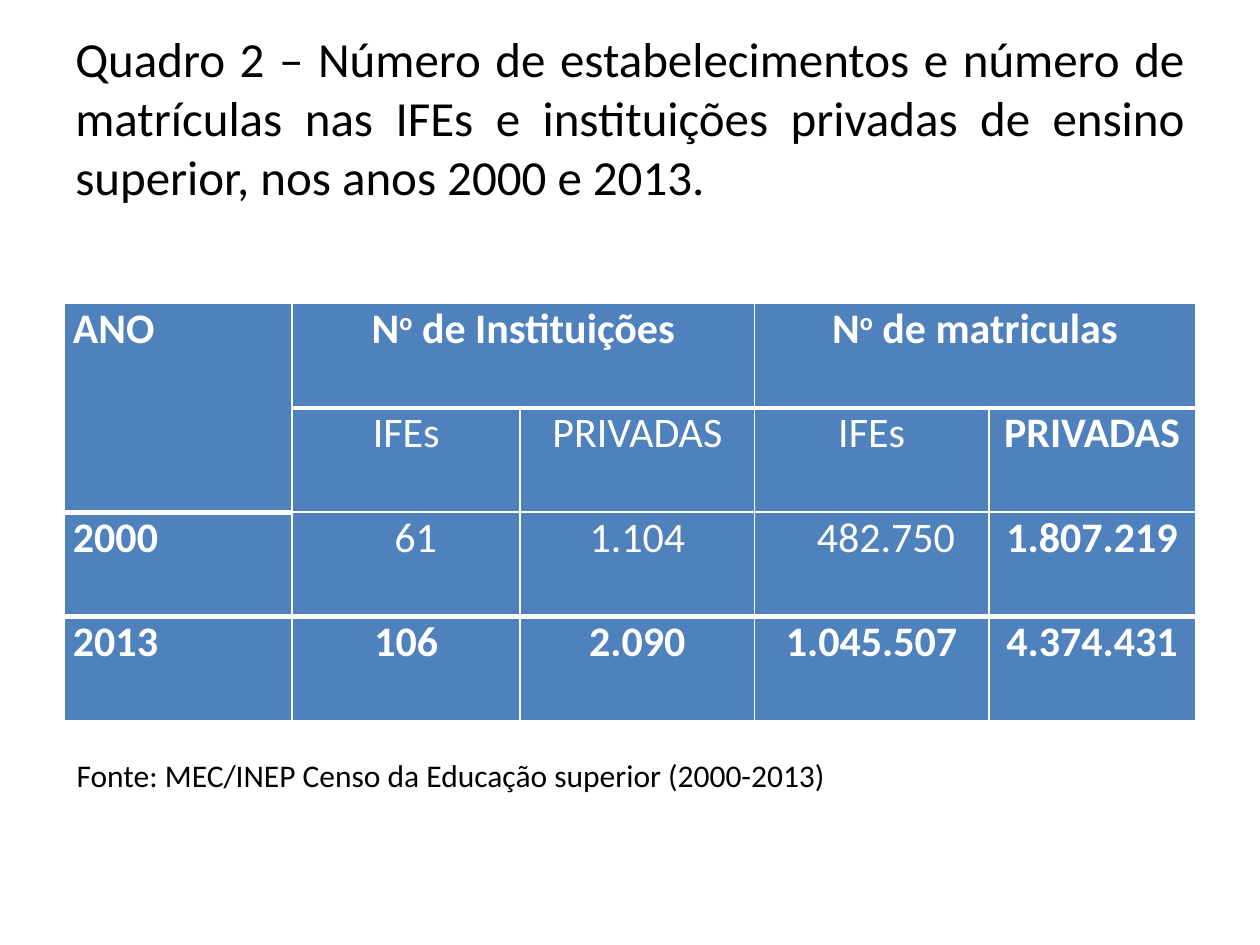
from lxml import etree
from pptx import Presentation
from pptx.dml.color import RGBColor
from pptx.enum import text as t
from pptx.oxml.ns import qn
from pptx.util import Pt

TITLE = ("Quadro 2 – Número de estabelecimentos e número de matrículas nas IFEs "
         "e instituições privadas de ensino superior, nos anos 2000 e 2013.")
SOURCE = "Fonte: MEC/INEP Censo da Educação superior (2000-2013)"
ROWS = [
    ["ANO", ("N", "o", " de Instituições"), "", ("N", "o", " de matriculas"), ""],
    ["", "IFEs", "PRIVADAS", "IFEs", "PRIVADAS"],
    ["2000", "61", "1.104", "482.750", "1.807.219"],
    ["2013", "106", "2.090", "1.045.507", "4.374.431"],
]
SPANS = [((0, 0), (1, 0)), ((0, 1), (0, 2)), ((0, 3), (0, 4))]
LIGHT = {(r, c) for r in (1, 2) for c in (1, 2, 3)}
INDENT = {(2, 1): 10.8, (2, 3): 16.3}
# Rules drawn thick, as (row above, column)
THICK = {(0, c) for c in range(1, 5)} | {(1, 0)} | {(2, c) for c in range(5)}
COLS = [130.3, 130.3, 133.9, 133.9, 118.1]
ROW_H = 59.6
BLUE, WHITE, BLACK = "4F81BD", "FFFFFF", "000000"
LEFT, JUST, MID = t.PP_ALIGN.LEFT, t.PP_ALIGN.JUSTIFY, t.PP_ALIGN.CENTER


def color(code):
    return RGBColor.from_string(code)


def write(frame, parts, align, ink, **style):
    """Fill the first paragraph; the second of several parts is raised."""
    para = frame.paragraphs[0]
    para.alignment = align
    for i, part in enumerate([parts] if isinstance(parts, str) else parts):
        run = para.add_run()
        run.text = part
        for key, val in {"name": "Calibri", **style}.items():
            setattr(run.font, key, val)
        run.font.color.rgb = color(ink)
        if i == 1:
            run.font._element.set("baseline", "30000")


def add_text(slide, box, words, align, size, **frame):
    area = slide.shapes.add_textbox(*map(Pt, box)).text_frame
    for key, val in {"word_wrap": True, **frame}.items():
        setattr(area, key, val)
    write(area, words, align, BLACK, size=Pt(size))


def add_rules(cell, row, col):
    widths = {"L": 1, "R": 1,
              "T": 3 if (row - 1, col) in THICK else 1,
              "B": 3 if (row, col) in THICK else 1}
    props = cell._tc.get_or_add_tcPr()
    for i, (side, width) in enumerate(widths.items()):
        line = etree.Element(qn(f"a:ln{side}"), w=str(Pt(width)))
        fill = etree.SubElement(line, qn("a:solidFill"))
        etree.SubElement(fill, qn("a:srgbClr"), val=WHITE)
        props.insert(i, line)


def add_grid(slide, left, top):
    size = sum(COLS), ROW_H * len(ROWS)
    grid = slide.shapes.add_table(len(ROWS), len(COLS),
                                  *map(Pt, (left, top, *size))).table
    grid.horz_banding = False
    for col, width in zip(grid.columns, COLS):
        col.width = Pt(width)
    for row in grid.rows:
        row.height = Pt(ROW_H)
    for start, end in SPANS:
        grid.cell(*start).merge(grid.cell(*end))
    for r, row in enumerate(ROWS):
        for c, words in enumerate(row):
            cell = grid.cell(r, c)
            cell.fill.solid()
            cell.fill.fore_color.rgb = color(BLUE)
            pads = {"left": 5 + INDENT.get((r, c), 0), "right": 5,
                    "top": 0, "bottom": 0}
            for side, pad in pads.items():
                setattr(cell, f"margin_{side}", Pt(pad))
            add_rules(cell, r, c)
            if words:
                write(cell.text_frame, words, MID if c else JUST, WHITE,
                      size=Pt(24), bold=(r, c) not in LIGHT)


def main():
    deck = Presentation()
    deck.slide_width, deck.slide_height = Pt(720), Pt(540)
    slide = deck.slides.add_slide(deck.slide_layouts[6])
    add_text(slide, (36, 21.6, 648, 90), TITLE, JUST, 28,
             vertical_anchor=t.MSO_ANCHOR.MIDDLE)
    add_grid(slide, 36.7, 173.5)
    add_text(slide, (36.7, 428.4, 623.5, 28.8), SOURCE, LEFT, 18,
             auto_size=t.MSO_AUTO_SIZE.SHAPE_TO_FIT_TEXT)
    deck.save("out.pptx")


if __name__ == "__main__":
    main()
